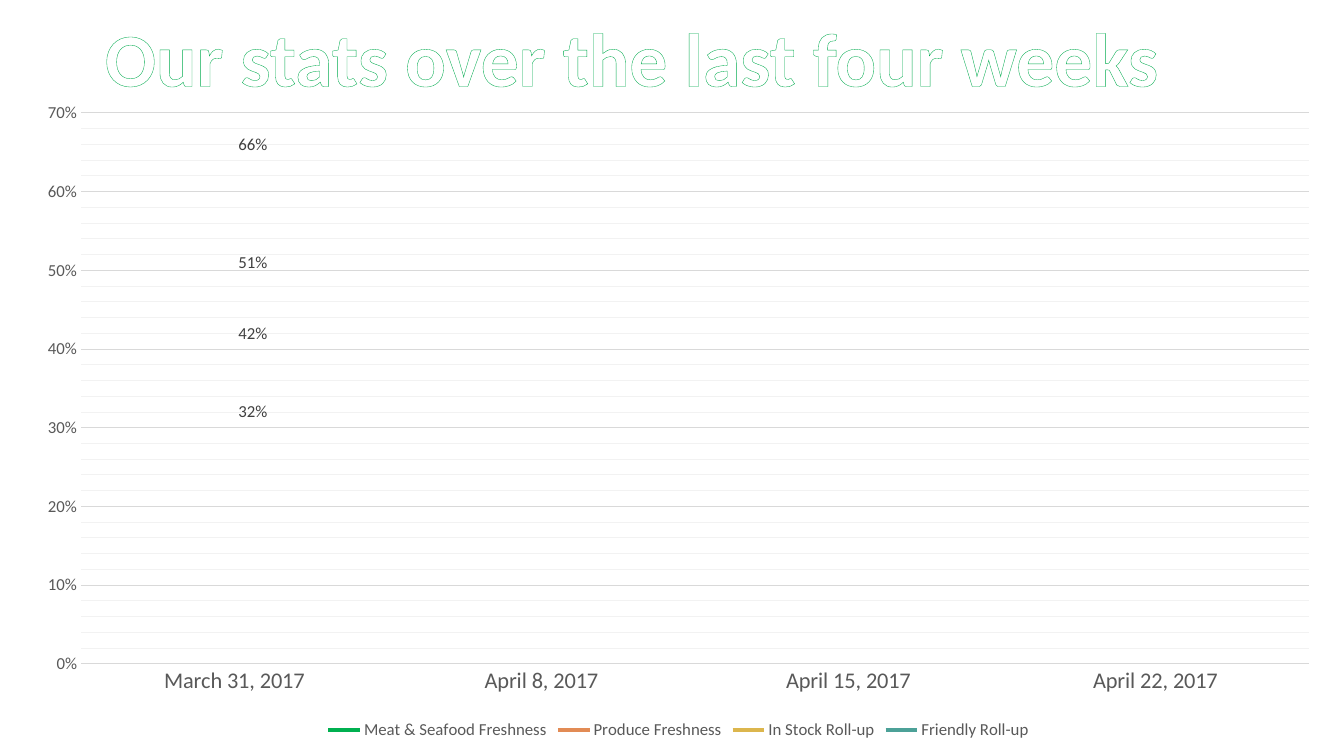
from lxml.etree import SubElement
from pptx import Presentation
from pptx.chart.data import CategoryChartData
from pptx.dml.color import RGBColor
from pptx.enum.chart import XL_CHART_TYPE as ChartType
from pptx.enum.chart import XL_LABEL_POSITION as LabelPosition
from pptx.enum.chart import XL_LEGEND_POSITION as LegendPosition
from pptx.enum.chart import XL_MARKER_STYLE as MarkerStyle
from pptx.enum.chart import XL_TICK_MARK as TickMark
from pptx.enum.dml import MSO_PATTERN as Pattern
from pptx.enum.text import MSO_ANCHOR as Anchor
from pptx.oxml import parse_xml
from pptx.oxml.ns import nsdecls, qn
from pptx.util import Pt

EMU_PER_PX = 914400 / 100.8

WHITE = RGBColor(0xFF, 0xFF, 0xFF)
BLACK = RGBColor(0x00, 0x00, 0x00)
LIME = RGBColor(0x92, 0xD0, 0x50)
OUTLINE_GREEN = RGBColor(0x00, 0xAC, 0x4E)
GREEN = RGBColor(0x00, 0xB0, 0x50)
ORANGE = RGBColor(0xE2, 0x8B, 0x55)
GOLD = RGBColor(0xDC, 0xB6, 0x4D)
TEAL = RGBColor(0x4C, 0xA1, 0x98)
AXIS_GRAY = RGBColor(0x59, 0x59, 0x59)
LABEL_GRAY = RGBColor(0x40, 0x40, 0x40)
MAJOR_GRID = RGBColor(0xD9, 0xD9, 0xD9)
MINOR_GRID = RGBColor(0xF2, 0xF2, 0xF2)

WEEKS = ["March 31, 2017", "April 8, 2017", "April 15, 2017", "April 22, 2017"]
STATS = [
    ("Meat & Seafood Freshness", 0.32, GREEN),
    ("Produce Freshness", 0.51, ORANGE),
    ("In Stock Roll-up", 0.42, GOLD),
    ("Friendly Roll-up", 0.66, TEAL),
]
CHART_BOX = (22, 91, 1313, 653)
PLOT_BOX = (81, 113, 1228, 551)


def px(length):
    return round(length * EMU_PER_PX)


def style_font(font, size, color=None, bold=False, name="Calibri"):
    font.name = name
    font.size = Pt(size)
    font.bold = bold
    if color is not None:
        font.fill.solid()
        font.fill.fore_color.rgb = color


def add_text(paragraph, text, **style):
    run = paragraph.add_run()
    run.text = text
    style_font(run.font, **style)
    return run


def style_line(line, color, width):
    line.color.rgb = color
    line.width = Pt(width)


def line_xml(color, width):
    return parse_xml(
        f'<a:ln {nsdecls("a")} w="{Pt(width)}"><a:solidFill>'
        f'<a:srgbClr val="{color}"/></a:solidFill></a:ln>'
    )


class StatsSlide:
    def __init__(self, presentation):
        self.slide = presentation.slides.add_slide(presentation.slide_layouts[6])
        self.slide.background.fill.solid()
        self.slide.background.fill.fore_color.rgb = WHITE

    def add_title(self, text, left, top, width, height):
        shape = self.slide.shapes.add_textbox(*map(px, (left, top, width, height)))
        frame = shape.text_frame
        frame.word_wrap = True
        frame.vertical_anchor = Anchor.MIDDLE
        paragraph = frame.paragraphs[0]
        paragraph.line_spacing = 0.9
        run = add_text(paragraph, text, size=54, bold=True)
        fill = run.font.fill
        fill.patterned()
        fill.pattern = Pattern.TRELLIS
        fill.fore_color.rgb = LIME
        fill.back_color.rgb = WHITE
        run._r.get_or_add_rPr().insert(0, line_xml(OUTLINE_GREEN, 1))

    def add_line_chart(self, categories, stats, box, plot_box):
        data = CategoryChartData(number_format="0%")
        data.categories = categories
        for name, first_value, color in stats:
            data.add_series(name, [first_value] + [None] * (len(categories) - 1))
        chart = self.slide.shapes.add_chart(ChartType.LINE, *map(px, box), data).chart
        chart.has_title = False
        style_font(chart.font, 10, BLACK)
        chart.has_legend = True
        chart.legend.position = LegendPosition.BOTTOM
        chart.legend.include_in_layout = False
        style_font(chart.legend.font, 12, AXIS_GRAY)
        chart.plots[0].vary_by_categories = False
        for series, (name, value, color) in zip(chart.plots[0].series, stats):
            self.style_series(series, color)
        self.style_axis(chart.category_axis, 16)
        self.style_value_axis(chart.value_axis)
        self.style_minor_grid(chart)
        self.place_plot(chart, box, plot_box)

    def style_series(self, series, color):
        series.smooth = False
        series.marker.style = MarkerStyle.NONE
        style_line(series.format.line, color, 2.25)
        labels = series.data_labels
        labels.show_value = True
        labels.position = LabelPosition.RIGHT
        labels.number_format = "0%"
        labels.number_format_is_linked = False
        style_font(labels.font, 12, LABEL_GRAY)

    def style_axis(self, axis, size):
        axis.major_tick_mark = TickMark.NONE
        axis.minor_tick_mark = TickMark.NONE
        axis.format.line.fill.background()
        style_font(axis.tick_labels.font, size, AXIS_GRAY)

    def style_value_axis(self, axis):
        self.style_axis(axis, 12)
        axis.minimum_scale = 0
        axis.maximum_scale = 0.7
        axis.major_unit = 0.1
        axis.minor_unit = 0.02
        axis.has_major_gridlines = True
        axis.has_minor_gridlines = True
        style_line(axis.major_gridlines.format.line, MAJOR_GRID, 0.75)
        axis.tick_labels.number_format = "0%"
        axis.tick_labels.number_format_is_linked = False

    def style_minor_grid(self, chart):
        gridlines = chart.element.find(".//" + qn("c:minorGridlines"))
        properties = SubElement(gridlines, qn("c:spPr"))
        properties.append(line_xml(MINOR_GRID, 0.75))

    def place_plot(self, chart, box, plot_box):
        left, top, width, height = box
        plot_left, plot_top, plot_width, plot_height = plot_box
        settings = {
            "layoutTarget": "inner",
            "xMode": "edge",
            "yMode": "edge",
            "x": (plot_left - left) / width,
            "y": (plot_top - top) / height,
            "w": plot_width / width,
            "h": plot_height / height,
        }
        plot_area = chart.element.find(".//" + qn("c:plotArea"))
        for layout in plot_area.findall(qn("c:layout")):
            plot_area.remove(layout)
        layout = parse_xml(f'<c:layout {nsdecls("c")}><c:manualLayout/></c:layout>')
        for tag, value in settings.items():
            SubElement(layout[0], qn(f"c:{tag}"), val=str(value))
        plot_area.insert(0, layout)


def main():
    presentation = Presentation()
    presentation.slide_width = px(1344)
    presentation.slide_height = px(756)
    stats_slide = StatsSlide(presentation)
    stats_slide.add_title("Our stats over the last four weeks", 95, 0, 1159, 124)
    stats_slide.add_line_chart(WEEKS, STATS, CHART_BOX, PLOT_BOX)
    presentation.save("out.pptx")


if __name__ == "__main__":
    main()
